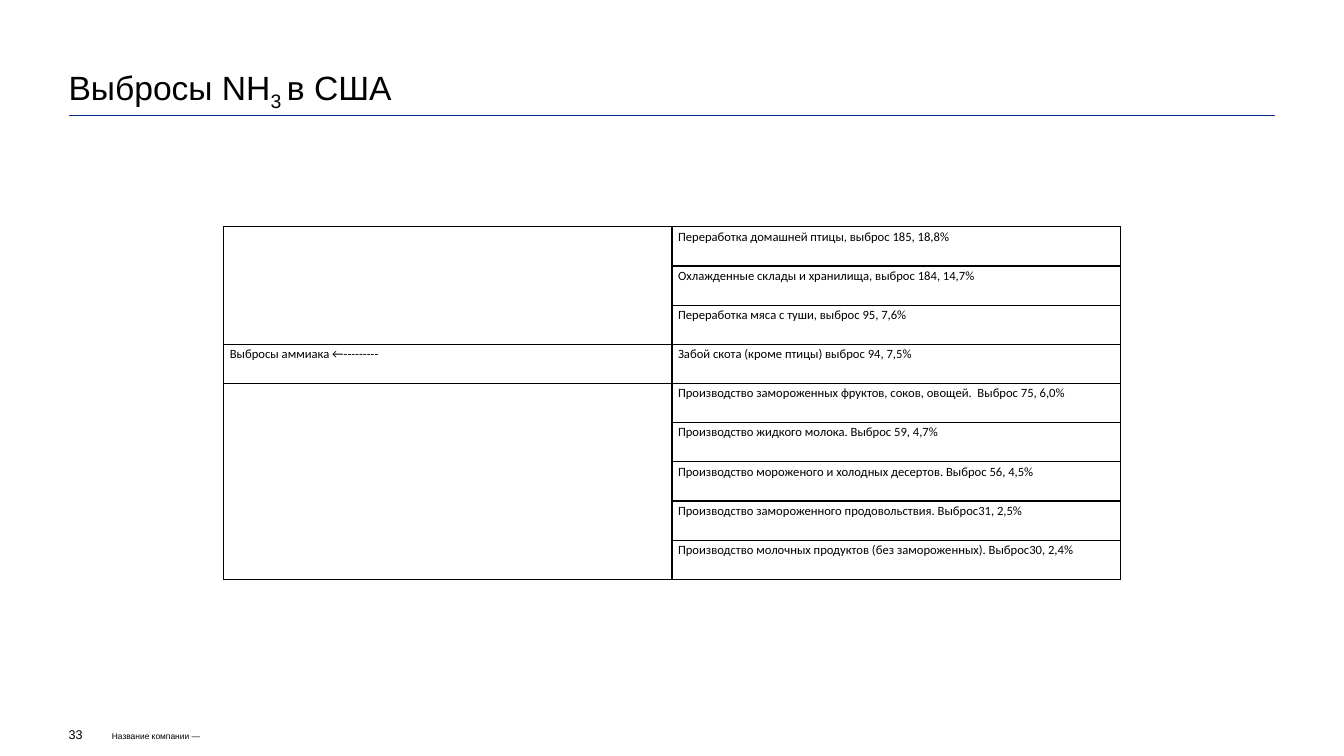
from lxml.etree import SubElement
from pptx import Presentation
from pptx.dml.color import RGBColor
from pptx.enum.shapes import MSO_CONNECTOR
from pptx.enum.text import MSO_ANCHOR
from pptx.oxml.ns import qn
from pptx.util import Inches, Pt

BLACK = "000000"
RULE_BLUE = "08338F"
SOURCES = [
    "Переработка домашней птицы, выброс 185, 18,8%",
    "Охлажденные склады и хранилища, выброс 184, 14,7%",
    "Переработка мяса с туши, выброс 95, 7,6%",
    "Забой скота (кроме птицы) выброс 94, 7,5%",
    "Производство замороженных фруктов, соков, овощей.  Выброс 75, 6,0%",
    "Производство жидкого молока. Выброс 59, 4,7%",
    "Производство мороженого и холодных десертов. Выброс 56, 4,5%",
    "Производство замороженного продовольствия. Выброс31, 2,5%",
    "Производство молочных продуктов (без замороженных). Выброс30, 2,4%",
]
LABEL_ROW = 3


def color(value):
    """Turn a hex string into a colour."""
    return RGBColor.from_string(value)


def style_font(font, name, size):
    """Set the typeface and size of black text."""
    font.name = name
    font.size = Pt(size)
    font.color.rgb = color(BLACK)


def clear_margins(frame, anchor):
    """Remove the insets of a text frame and anchor its text."""
    frame.margin_left = frame.margin_right = 0
    frame.margin_top = frame.margin_bottom = 0
    frame.vertical_anchor = anchor
    frame.word_wrap = True


def add_title(slide):
    """Fill and place the title with its chemical subscript."""
    title = slide.shapes.title
    title.left, title.top = Inches(0.68), Inches(0.21)
    title.width, title.height = Inches(11.97), Inches(0.87)
    clear_margins(title.text_frame, MSO_ANCHOR.BOTTOM)
    paragraph = title.text_frame.paragraphs[0]
    paragraph.alignment = 1
    paragraph.line_spacing = 0.9
    style_font(paragraph.font, "Arial", 24)
    for text, baseline in (("Выбросы NH", 0), ("3 ", -25000), ("в США", 0)):
        run = paragraph.add_run()
        run.text = text
        if baseline:
            run.font._element.set("baseline", str(baseline))


def add_rule(slide):
    """Draw the line below the title."""
    rule = slide.shapes.add_connector(
        MSO_CONNECTOR.STRAIGHT, Inches(0.68), Inches(1.15), Inches(12.65), Inches(1.15)
    )
    rule.line.color.rgb = color(RULE_BLUE)
    rule.line.width = Pt(0.75)
    SubElement(rule._element.spPr, qn("a:effectLst"))


def add_label(slide, text, left, top, width, height, size, anchor):
    """Add a small footer text."""
    box = slide.shapes.add_textbox(Inches(left), Inches(top), Inches(width), Inches(height))
    clear_margins(box.text_frame, anchor)
    paragraph = box.text_frame.paragraphs[0]
    paragraph.text = text
    style_font(paragraph.font, "Arial", size)


def add_borders(cell):
    """Give a cell thin black borders on all sides."""
    properties = cell._tc.get_or_add_tcPr()
    for side in ("lnL", "lnR", "lnT", "lnB"):
        line = SubElement(properties, qn(f"a:{side}"), w=str(Pt(1)))
        fill = SubElement(line, qn("a:solidFill"))
        SubElement(fill, qn("a:srgbClr"), val=BLACK)


def style_cell(cell, text):
    """Write and format one table cell."""
    add_borders(cell)
    cell.fill.background()
    cell.margin_left = cell.margin_right = Inches(0.06)
    cell.margin_top = cell.margin_bottom = 0
    paragraph = cell.text_frame.paragraphs[0]
    paragraph.text = text
    paragraph.line_spacing = 1.15
    style_font(paragraph.font, "Calibri", 9)


def add_emissions_table(slide):
    """Add the table of ammonia emission sources."""
    table = slide.shapes.add_table(
        len(SOURCES), 2, Inches(2.22), Inches(2.25), Inches(8.89), Inches(3.5)
    ).table
    table.first_row = table.horz_banding = False
    for row, source in enumerate(SOURCES):
        label = "Выбросы аммиака ←---------" if row == LABEL_ROW else ""
        style_cell(table.cell(row, 0), label)
        style_cell(table.cell(row, 1), source)
    for first, last in ((0, LABEL_ROW - 1), (LABEL_ROW + 1, len(SOURCES) - 1)):
        table.cell(first, 0).merge(table.cell(last, 0))


def main():
    """Build and save the slide."""
    presentation = Presentation()
    presentation.slide_width = Inches(13.33)
    presentation.slide_height = Inches(7.5)
    slide = presentation.slides.add_slide(presentation.slide_layouts[5])
    add_rule(slide)
    add_label(slide, "Название компании —", 1.11, 7.25, 1.6, 0.1, 6, MSO_ANCHOR.TOP)
    add_label(slide, "33", 0.68, 7.17, 0.39, 0.24, 9, MSO_ANCHOR.MIDDLE)
    add_title(slide)
    add_emissions_table(slide)
    presentation.save("out.pptx")


if __name__ == "__main__":
    main()
